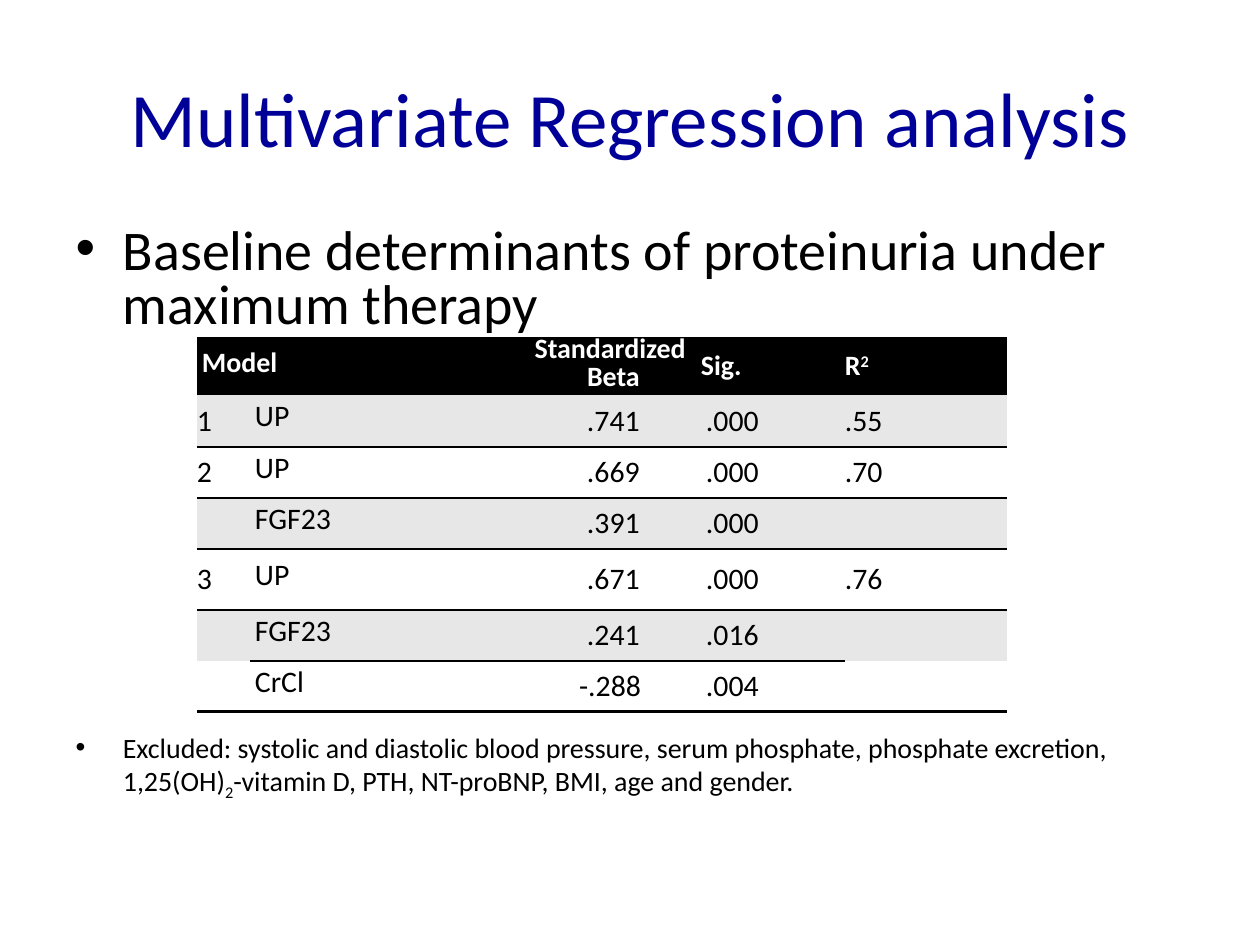
from dataclasses import dataclass

from lxml.etree import SubElement
from pptx import Presentation
from pptx.dml.color import RGBColor
from pptx.enum.text import MSO_ANCHOR, MSO_AUTO_SIZE, PP_ALIGN
from pptx.oxml.ns import qn
from pptx.util import Pt

PX = 914400 // 126  # EMU in one px


@dataclass(frozen=True)
class Theme:
    font: str = "Calibri"
    title: str = "000099"
    ink: str = "000000"
    paper: str = "FFFFFF"
    band: str = "E7E7E7"
    title_size: int = 44
    body_size: int = 32
    note_size: int = 16
    head_size: int = 16
    cell_size: int = 17
    rule: float = 1.5
    end_rule: float = 2


theme = Theme()


def add_run(p, text, size, color, bold=False, baseline=0):
    """Add a run; baseline is the shift in percent, for super- and subscripts."""
    r = p.add_run()
    r.text = text
    r.font.name = theme.font
    r.font.size = Pt(size)
    r.font.bold = bold
    r.font.color.rgb = RGBColor.from_string(color)
    if baseline:
        r.font._element.set("baseline", str(baseline * 1000))


def add_border(cell, side, width):
    """Draw one edge of a cell: side is T or B, width is in points."""
    tcPr = cell._tc.get_or_add_tcPr()
    ln = tcPr.makeelement(qn(f"a:ln{side}"), {"w": str(Pt(width))})
    fill = SubElement(ln, qn("a:solidFill"))
    SubElement(fill, qn("a:srgbClr")).set("val", theme.ink)
    tcPr.insert(0, ln)


prs = Presentation()
prs.slide_width, prs.slide_height = 1260 * PX, 945 * PX
s = prs.slides.add_slide(prs.slide_layouts[1])

# Title
title = s.shapes.title
title.left, title.top, title.width, title.height = (v * PX for v in (63, 38, 1134, 158))
tf = title.text_frame
tf.vertical_anchor = MSO_ANCHOR.MIDDLE
tf.auto_size = MSO_AUTO_SIZE.NONE
p = tf.paragraphs[0]
p.alignment = PP_ALIGN.CENTER
add_run(p, "Multivariate Regression analysis", theme.title_size, theme.title)

# Bullets above and below the table
body = s.placeholders[1]
body.left, body.top, body.width, body.height = (v * PX for v in (63, 221, 1171, 624))
tf = body.text_frame
tf.auto_size = MSO_AUTO_SIZE.NONE
p = tf.paragraphs[0]
p.line_spacing = 0.8
p.space_before = Pt(0)
add_run(p, "Baseline determinants of proteinuria under maximum therapy",
        theme.body_size, theme.ink)

p = tf.add_paragraph()
p.space_before = Pt(226)
for text, baseline in [
    ("Excluded: systolic and diastolic blood pressure, serum phosphate, "
     "phosphate excretion, 1,25(OH)", 0),
    ("2", -25),
    ("-vitamin D, PTH, NT-proBNP, BMI, age and gender.", 0),
]:
    add_run(p, text, theme.note_size, theme.ink, baseline=baseline)

# Regression table
rows = [
    ["Model", "", "Standardized \nBeta", "Sig.", "R2"],
    ["1", "UP", ".741", ".000", ".55"],
    ["2", "UP", ".669", ".000", ".70"],
    ["", "FGF23", ".391", ".000", ""],
    ["3", "UP", ".671", ".000", ".76"],
    ["", "FGF23", ".241", ".016", ""],
    ["", "CrCl", "-.288 ", ".004", ""],
]
col_widths = [53, 271, 180, 144, 162]
row_heights = [58, 52, 51, 51, 61, 51, 51]
# Row -> columns with a rule below, and its width
rules = {
    1: (range(5), theme.rule),
    2: (range(2, 4), theme.rule),
    3: (range(5), theme.rule),
    4: (range(1, 4), theme.rule),
    6: (range(5), theme.end_rule),
}
NO_STYLE = "{2D5ABB26-0587-4C30-8999-92F81FD0307C}"

frame = s.shapes.add_table(len(rows), len(col_widths), 197 * PX, 337 * PX,
                           sum(col_widths) * PX, sum(row_heights) * PX)
table = frame.table
table.first_row = table.horz_banding = False
table._tbl.tblPr.find(qn("a:tableStyleId")).text = NO_STYLE
for column, width in zip(table.columns, col_widths):
    column.width = width * PX
for row, height in zip(table.rows, row_heights):
    row.height = height * PX
table.cell(0, 0).merge(table.cell(0, 1))

for i, row in enumerate(rows):
    head = i == 0
    size, color = (theme.head_size, theme.paper) if head else (theme.cell_size, theme.ink)
    fill = theme.ink if head else theme.band if i % 2 else theme.paper
    rule_cols, rule_width = rules.get(i, ((), 0))
    for j, text in enumerate(row):
        cell = table.cell(i, j)
        cell.fill.solid()
        cell.fill.fore_color.rgb = RGBColor.from_string(fill)
        cell.vertical_anchor = MSO_ANCHOR.MIDDLE
        cell.margin_left = cell.margin_right = cell.margin_top = cell.margin_bottom = 0
        if j in rule_cols:
            add_border(cell, "B", rule_width)
            if i + 1 < len(rows):
                add_border(table.cell(i + 1, j), "T", rule_width)
        if not text:
            continue

        indented = j in ((0, 2) if head else (1, 2, 3))
        fixed_lines = j in ((0, 2) if head else (1,))
        for k, line in enumerate(text.split("\n")):
            tf = cell.text_frame
            p = tf.add_paragraph() if k else tf.paragraphs[0]
            if indented:
                p._p.get_or_add_pPr().set("marL", str(5 * PX))
            if fixed_lines:
                p.line_spacing = Pt(16)
            if j == 2:
                p.alignment = PP_ALIGN.CENTER
            if line == "R2":
                add_run(p, "R", size, color, head)
                add_run(p, "2", size, color, head, baseline=30)
            else:
                add_run(p, line, size, color, head)

prs.save("out.pptx")
